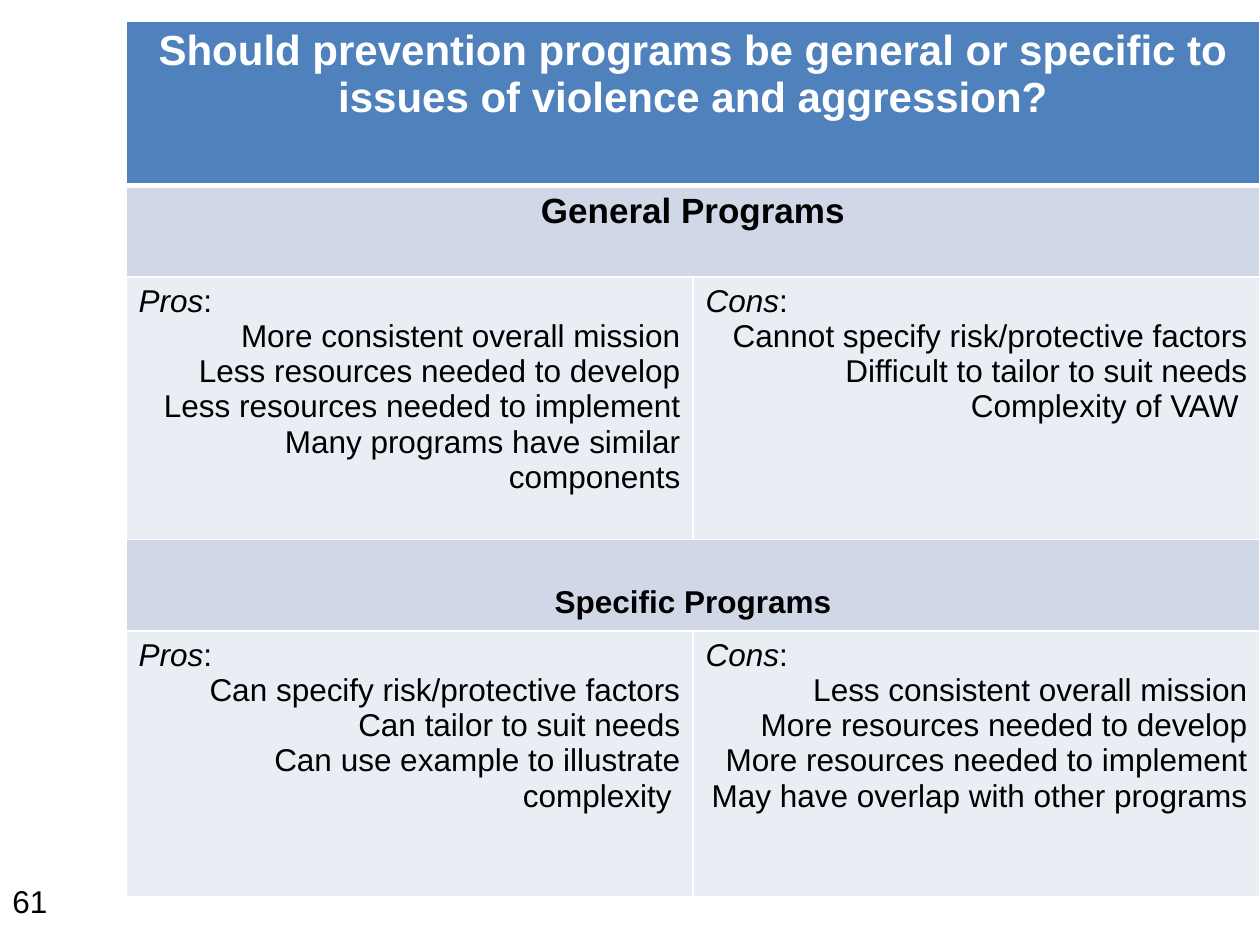
from lxml import etree
from pptx import Presentation
from pptx.dml.color import RGBColor
from pptx.enum.text import MSO_ANCHOR, PP_ALIGN
from pptx.oxml.ns import qn
from pptx.util import Inches, Pt

LEFT, CENTER, RIGHT = PP_ALIGN.LEFT, PP_ALIGN.CENTER, PP_ALIGN.RIGHT
TOP, BOTTOM = MSO_ANCHOR.TOP, MSO_ANCHOR.BOTTOM
FONT = "Arial"
COLORS = {
    "header": "4F81BD",
    "section": "D0D8E8",
    "body": "E9EDF4",
    "white": "FFFFFF",
    "black": "000000",
}
ROW_HEIGHTS = [1.3, 0.73, 2.08, 0.73, 2.11]
QUESTION = (
    "Should prevention programs be general or specific to "
    "issues of violence and aggression?"
)
GENERAL = {
    "Pros": [
        "More consistent overall mission",
        "Less resources needed to develop",
        "Less resources needed to implement",
        "Many programs have similar components",
    ],
    "Cons": [
        "Cannot specify risk/protective factors",
        "Difficult to tailor to suit needs",
        "Complexity of VAW ",
    ],
}
SPECIFIC = {
    "Pros": [
        "Can specify risk/protective factors",
        "Can tailor to suit needs",
        "Can use example to illustrate complexity ",
    ],
    "Cons": [
        "Less consistent overall mission",
        "More resources needed to develop",
        "More resources needed to implement",
        "May have overlap with other programs",
    ],
}


def format_run(span, size, color="black", bold=False, italic=False):
    span.font.name = FONT
    span.font.size = Pt(size)
    span.font.bold = bold
    span.font.italic = italic
    span.font.color.rgb = RGBColor.from_string(COLORS[color])


def set_borders(cell, top=1, bottom=1):
    properties = cell._tc.get_or_add_tcPr()
    for side, width in (("L", 1), ("R", 1), ("T", top), ("B", bottom)):
        line = etree.SubElement(properties, qn(f"a:ln{side}"), w=str(Pt(width)))
        fill = etree.SubElement(line, qn("a:solidFill"))
        etree.SubElement(fill, qn("a:srgbClr"), val=COLORS["white"])


def fill_cell(cell, color):
    cell.fill.solid()
    cell.fill.fore_color.rgb = RGBColor.from_string(COLORS[color])


def add_heading(table, row, text, size, fill, color="black", anchor=TOP):
    cell = table.cell(row, 0)
    cell.merge(table.cell(row, 1))
    for part in (cell, table.cell(row, 1)):
        fill_cell(part, fill)
    cell.vertical_anchor = anchor
    cell.text_frame.text = text
    para = cell.text_frame.paragraphs[0]
    para.alignment = CENTER
    format_run(para.runs[0], size, color, bold=True)


def add_arguments(table, row, arguments):
    for column, (label, points) in enumerate(arguments.items()):
        cell = table.cell(row, column)
        fill_cell(cell, "body")
        para = cell.text_frame.paragraphs[0]
        para.alignment = LEFT
        for text, italic in ((label, True), (":", False)):
            span = para.add_run()
            span.text = text
            format_run(span, 18, italic=italic)
        for point in points:
            para = cell.text_frame.add_paragraph()
            para.text = point
            para.alignment = RIGHT
            format_run(para.runs[0], 18)


def add_comparison(page):
    table = page.shapes.add_table(
        len(ROW_HEIGHTS), 2, Inches(1), Inches(0.17),
        Inches(9), Inches(sum(ROW_HEIGHTS)),
    ).table
    for row, height in enumerate(ROW_HEIGHTS):
        table.rows[row].height = Inches(height)
        for cell in table.rows[row].cells:
            set_borders(cell, top=3 if row == 1 else 1, bottom=3 if row == 0 else 1)
    add_heading(table, 0, QUESTION, 24, "header", "white")
    add_heading(table, 1, "General Programs", 20, "section")
    add_arguments(table, 2, GENERAL)
    add_heading(table, 3, "Specific Programs", 18, "section", anchor=BOTTOM)
    table.cell(3, 0).margin_bottom = Inches(0.09)
    add_arguments(table, 4, SPECIFIC)


def add_page_number(page, number):
    box = page.shapes.add_textbox(Inches(0), Inches(6.95), Inches(2.17), Inches(0.4))
    box.text_frame.word_wrap = True
    box.text_frame.text = number
    format_run(box.text_frame.paragraphs[0].runs[0], 18)


def main():
    deck = Presentation()
    deck.slide_width, deck.slide_height = Inches(10), Inches(7.5)
    page = deck.slides.add_slide(deck.slide_layouts[6])
    add_comparison(page)
    add_page_number(page, "61")
    deck.save("out.pptx")


if __name__ == "__main__":
    main()
